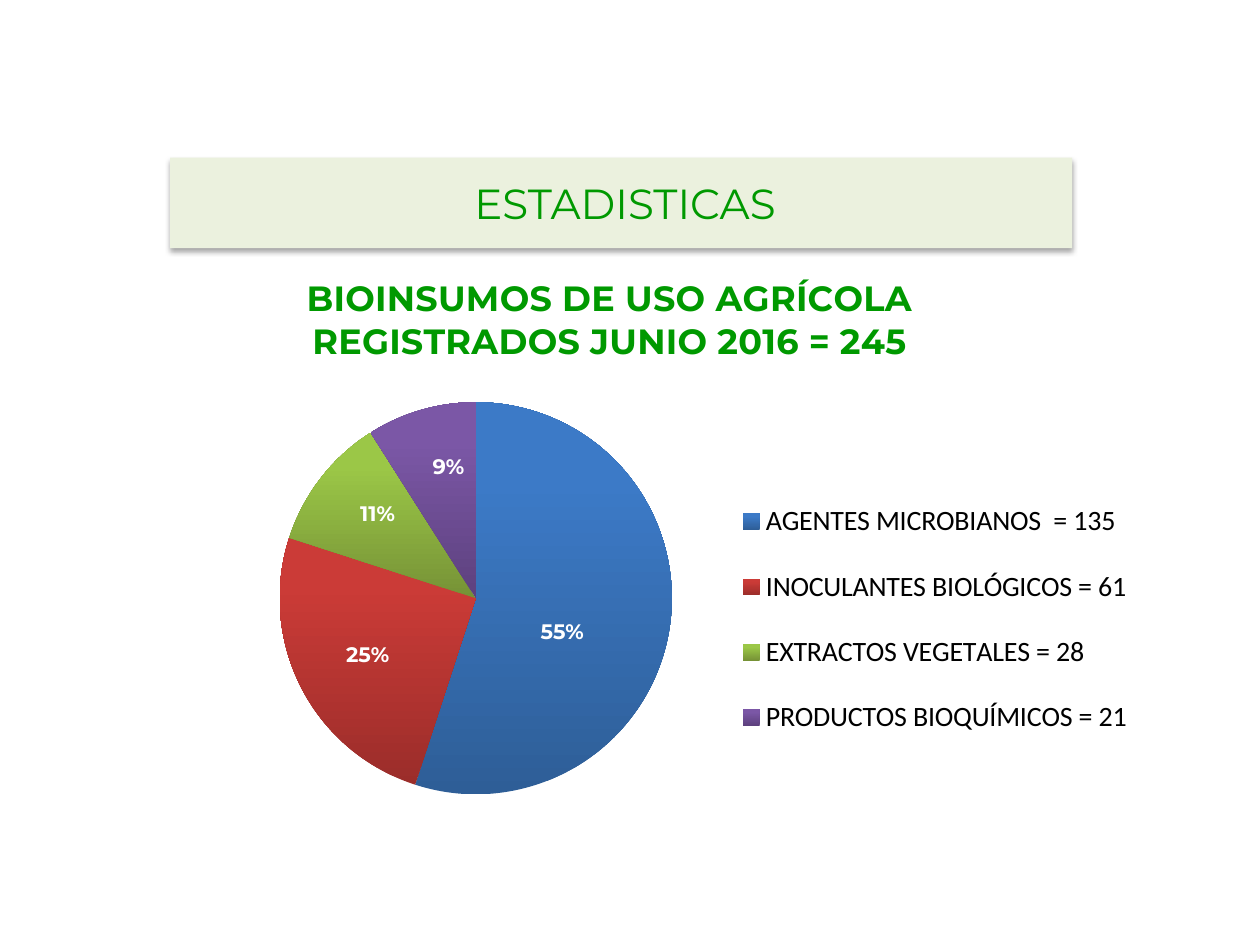
from lxml import etree
from pptx import Presentation
from pptx.chart.data import CategoryChartData
from pptx.dml.color import RGBColor
from pptx.enum.chart import XL_CHART_TYPE, XL_LABEL_POSITION, XL_LEGEND_POSITION
from pptx.enum.shapes import MSO_SHAPE
from pptx.enum.text import PP_ALIGN
from pptx.oxml import parse_xml
from pptx.oxml.ns import nsdecls, qn
from pptx.util import Inches, Pt

PIE = XL_CHART_TYPE.PIE
LABEL_CENTER = XL_LABEL_POSITION.CENTER
LEGEND_RIGHT = XL_LEGEND_POSITION.RIGHT
RECTANGLE = MSO_SHAPE.RECTANGLE
CENTER = PP_ALIGN.CENTER

GREEN = RGBColor(0x00, 0x99, 0x00)
PALE_GREEN = RGBColor(0xEB, 0xF1, 0xDE)
WHITE = RGBColor(0xFF, 0xFF, 0xFF)
BLACK = RGBColor(0x00, 0x00, 0x00)
BLUE_DARK, BLUE = RGBColor(0x2E, 0x5E, 0x97), RGBColor(0x3C, 0x7A, 0xC7)
RED_DARK, RED = RGBColor(0x9B, 0x2D, 0x2A), RGBColor(0xCB, 0x3B, 0x37)
LIME_DARK, LIME = RGBColor(0x76, 0x92, 0x36), RGBColor(0x9B, 0xC7, 0x47)
PURPLE_DARK, PURPLE = RGBColor(0x5D, 0x41, 0x7E), RGBColor(0x7B, 0x57, 0xA6)

PRODUCTS = [
    ("AGENTES MICROBIANOS  = 135", 55, BLUE_DARK, BLUE, (-0.01, 0.03)),
    ("INOCULANTES BIOLÓGICOS = 61", 25, RED_DARK, RED, (-0.02, 0.02)),
    ("EXTRACTOS VEGETALES = 28", 11, LIME_DARK, LIME, (-0.02, -0.04)),
    ("PRODUCTOS BIOQUÍMICOS = 21", 9, PURPLE_DARK, PURPLE, (0, -0.06)),
]


def set_font(font, name="Montserrat", size=12, color=BLACK, bold=False):
    font.name = name
    font.size = Pt(size)
    font.bold = bold
    font.color.rgb = color


def write(frame, text, align=CENTER, **style):
    paragraph = frame.paragraphs[0]
    paragraph.alignment = align
    run = paragraph.add_run()
    run.text = text
    set_font(run.font, **style)


def place(element, after, inner=False, **fractions):
    for old in element.findall(qn("c:layout")):
        element.remove(old)
    layout = etree.Element(qn("c:layout"))
    manual = etree.SubElement(layout, qn("c:manualLayout"))
    if inner:
        etree.SubElement(manual, qn("c:layoutTarget")).set("val", "inner")
    if after != "c:idx":
        for mode in ("c:xMode", "c:yMode"):
            etree.SubElement(manual, qn(mode)).set("val", "edge")
    for key, value in fractions.items():
        etree.SubElement(manual, qn(f"c:{key}")).set("val", str(value))
    anchor = element.find(qn(after)) if after else None
    if anchor is None:
        element.insert(0, layout)
    else:
        anchor.addnext(layout)


class StatisticsSlide:
    def __init__(self, presentation):
        self.slide = presentation.slides.add_slide(presentation.slide_layouts[6])

    def band(self, left, top, width, height):
        band = self.slide.shapes.add_shape(
            RECTANGLE, Inches(left), Inches(top), Inches(width), Inches(height))
        band.fill.solid()
        band.fill.fore_color.rgb = PALE_GREEN
        band.line.fill.background()
        band._element.spPr.append(parse_xml(
            f'<a:effectLst {nsdecls("a")}>'
            '<a:outerShdw blurRad="39370" dist="22860" dir="5400000" rotWithShape="0">'
            '<a:srgbClr val="000000"><a:alpha val="35000"/></a:srgbClr>'
            '</a:outerShdw></a:effectLst>'))

    def heading(self, text, left, top, width, height, **style):
        heading = self.slide.shapes.add_textbox(
            Inches(left), Inches(top), Inches(width), Inches(height))
        heading.text_frame.word_wrap = True
        write(heading.text_frame, text, **style)

    def pie(self, title, products, left, top, width, height):
        data = CategoryChartData()
        data.categories = [product[0] for product in products]
        data.add_series("Series 1", [product[1] for product in products])
        chart = self.slide.shapes.add_chart(
            PIE, Inches(left), Inches(top), Inches(width), Inches(height), data).chart
        set_font(chart.font, name="Calibri")
        chart.has_title = True
        write(chart.chart_title.text_frame, title, size=20, color=GREEN, bold=True)
        place(chart.chart_title._element, "c:tx", x=0.18, y=0.02)

        chart.has_legend = True
        chart.legend.position = LEGEND_RIGHT
        chart.legend.include_in_layout = False
        set_font(chart.legend.font, name="Calibri", size=16)
        place(chart.legend._element, "c:legendPos", x=0.6, y=0.36, w=0.39, h=0.48)

        pie = chart.plots[0]
        pie.vary_by_categories = True
        place(pie._element.getparent(), None, inner=True, x=0.16, y=0.22, w=0.38, h=0.69)
        for index, (_, _, dark, light, shift) in enumerate(products):
            self.slice(pie.series[0].points[index], dark, light, shift)

    def slice(self, point, dark, light, shift):
        fill = point.format.fill
        fill.gradient()
        fill.gradient_angle = 90
        for stop, color, position in zip(fill.gradient_stops, (dark, light), (0, 0.8)):
            stop.color.rgb = color
            stop.position = position
        point.format.line.fill.background()
        label = point.data_label
        set_font(label.font, color=WHITE, bold=True)
        label.position = LABEL_CENTER
        element = label._dLbl
        element.find(qn("c:showVal")).set("val", "0")
        element.find(qn("c:showPercent")).set("val", "1")
        place(element, "c:idx", x=shift[0], y=shift[1])


def main():
    presentation = Presentation()
    presentation.slide_width = Inches(10)
    presentation.slide_height = Inches(7.5)
    statistics = StatisticsSlide(presentation)
    statistics.band(1.35, 1.25, 7.16, 0.72)
    statistics.heading("ESTADISTICAS", 1.38, 1.36, 7.16, 0.5, size=24, color=GREEN)
    statistics.pie("BIOINSUMOS DE USO AGRÍCOLA REGISTRADOS JUNIO 2016 = 245",
                   PRODUCTS, 0.91, 2.02, 8.19, 4.83)
    presentation.save("out.pptx")


if __name__ == "__main__":
    main()
